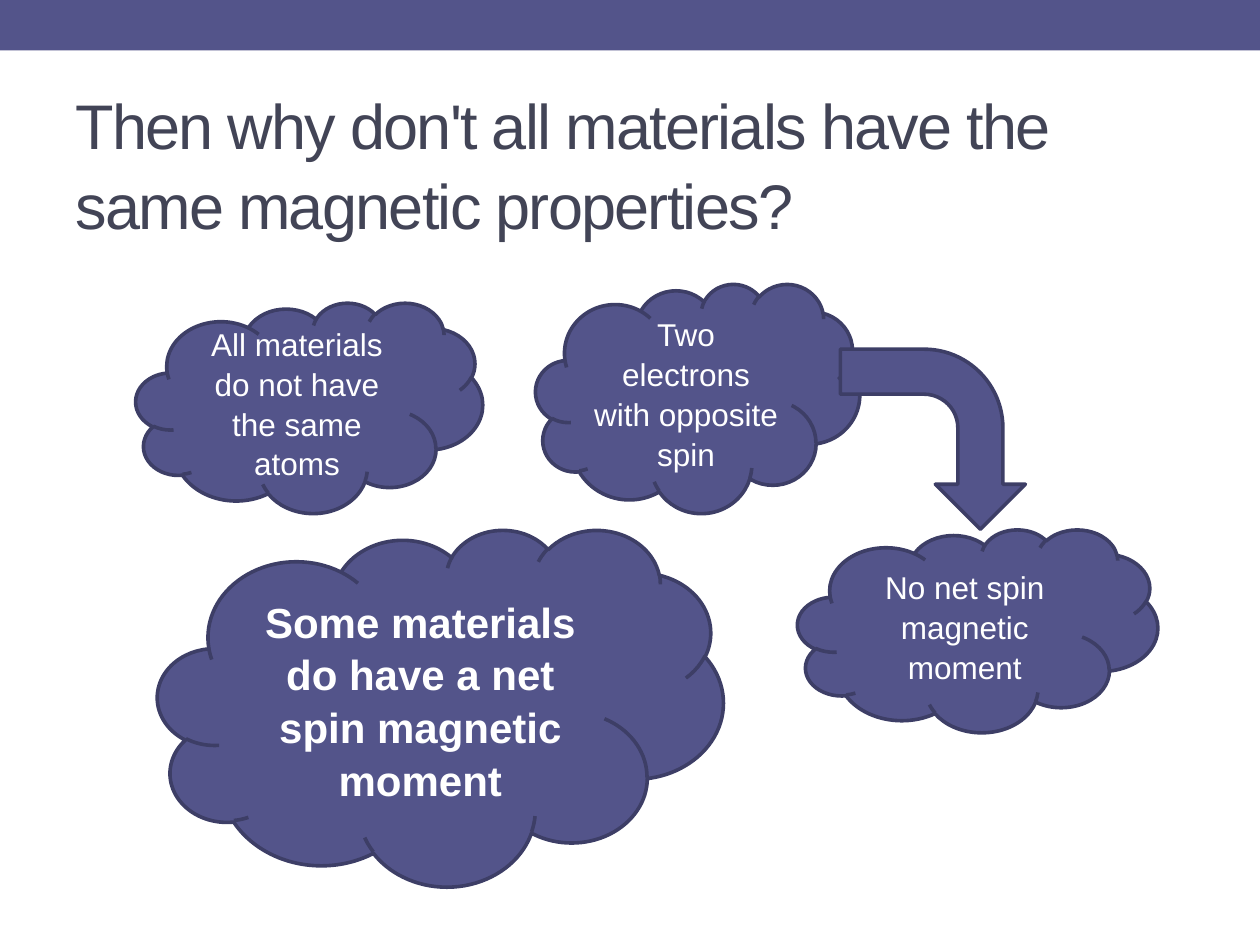
"""Build a slide on why materials differ in their magnetic properties."""
from pptx import Presentation
from pptx.dml.color import RGBColor
from pptx.enum.shapes import MSO_SHAPE
from pptx.enum.text import MSO_ANCHOR, PP_ALIGN
from pptx.util import Cm, Pt

RECT, CLOUD, BENT_ARROW = MSO_SHAPE.RECTANGLE, MSO_SHAPE.CLOUD, MSO_SHAPE.BENT_ARROW
MIDDLE, LEFT, CENTER = MSO_ANCHOR.MIDDLE, PP_ALIGN.LEFT, PP_ALIGN.CENTER
COLORS = {"accent": "53548A", "outline": "3D3E66", "title": "424456", "light": "FFFFFF"}
CLOUDS = [
    ("All materials do not have the same atoms", (2.74, 6.1, 6.99, 4.24), {}),
    ("Two electrons with opposite spin", (10.8, 5.72, 6.53, 4.62), {}),
    ("No net spin magnetic moment", (16.08, 10.67, 7.26, 4.09), {}),
    ("Some materials do have a net spin magnetic moment", (3.18, 10.67, 11.4, 7.19),
     {"size": Pt(24), "bold": True}),
]


class Deck:
    def __init__(self, prs):
        self.slide = prs.slides.add_slide(prs.slide_layouts[6])
        self.font = {"name": "Arial", "size": Pt(18)}

    def color(self, name):
        return RGBColor.from_string(COLORS[name])

    def text(self, sp, text, color, align, fmt):
        tf = sp.text_frame
        tf.word_wrap = True
        tf.vertical_anchor = MIDDLE
        p = tf.paragraphs[0]
        p.alignment = align
        p.line_spacing = 1.05
        r = p.add_run()
        r.text = text
        for key, value in {**self.font, **fmt}.items():
            setattr(r.font, key, value)
        r.font.color.rgb = self.color(color)
        return r

    def shape(self, kind, box, outlined=True):
        sp = self.slide.shapes.add_shape(kind, *map(Cm, box))
        sp.shadow.inherit = False
        sp.fill.solid()
        sp.fill.fore_color.rgb = self.color("accent")
        if outlined:
            sp.line.color.rgb = self.color("outline")
            sp.line.width = Pt(2.08)
        else:
            sp.line.fill.background()
        return sp

    def title(self, text, box):
        sp = self.slide.shapes.add_textbox(*map(Cm, box))
        r = self.text(sp, text, "title", LEFT, {"size": Pt(36)})
        r.font._element.set("spc", "-100")

    def cloud(self, text, box, fmt):
        self.text(self.shape(CLOUD, box), text, "light", CENTER, fmt)

    def arrow(self, box, rotation):
        self.shape(BENT_ARROW, box).rotation = rotation


def main():
    prs = Presentation()
    prs.slide_width, prs.slide_height = Cm(25.4), Cm(19.05)
    deck = Deck(prs)
    deck.shape(RECT, (0, 0, 25.4, 1.02), outlined=False)
    deck.title("Then why don't all materials have the same magnetic properties?",
               (1.27, 1.47, 22.86, 3.61))
    for text, box, fmt in CLOUDS:
        deck.cloud(text, box, fmt)
    deck.arrow((16.99, 6.99, 3.63, 3.73), 90)
    prs.save("out.pptx")


if __name__ == "__main__":
    main()
